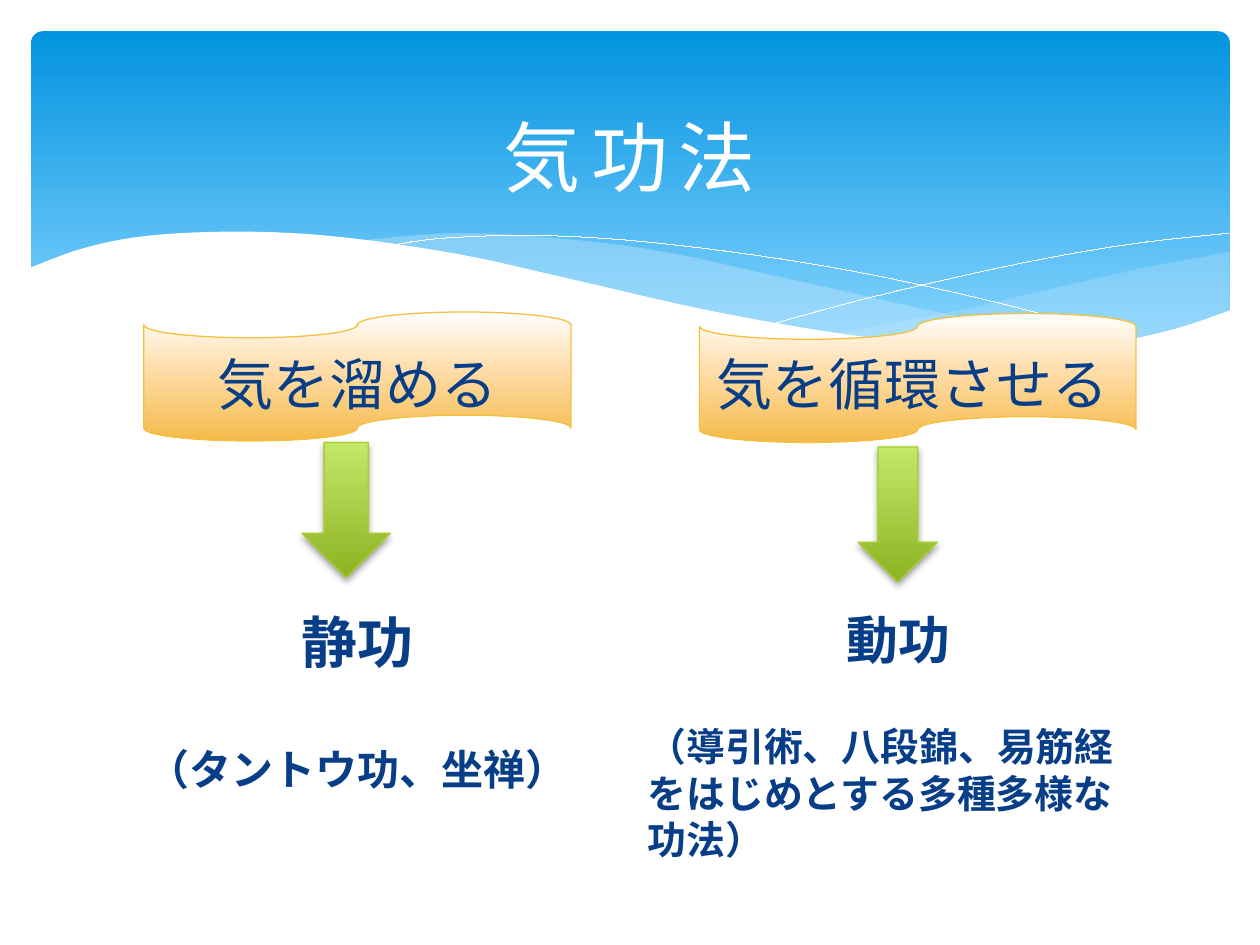
import pptx
import pptx.dml.color
import pptx.enum.shapes
import pptx.enum.text
import pptx.oxml.ns
import pptx.util
from lxml import etree

Cm, Pt = pptx.util.Cm, pptx.util.Pt
RGBColor = pptx.dml.color.RGBColor
Shape = pptx.enum.shapes.MSO_SHAPE
Align = pptx.enum.text.PP_ALIGN
Anchor = pptx.enum.text.MSO_ANCHOR
qn = pptx.oxml.ns.qn

FONT = "Noto Sans CJK JP"
WHITE = RGBColor(0xFF, 0xFF, 0xFF)
NAVY = RGBColor(0x07, 0x3E, 0x87)
PALE_BLUE = RGBColor(0xC6, 0xE7, 0xFC)
AMBER = RGBColor(0xF5, 0xC0, 0x40)
LIME = RGBColor(0xA5, 0xD0, 0x28)
SKY_STOPS = [(0, RGBColor(0x02, 0x93, 0xE0)), (90, RGBColor(0x83, 0xD3, 0xFE))]
TAPE_STOPS = [(0, WHITE), (44, RGBColor(0xFF, 0xDD, 0xAA)), (100, RGBColor(0xF4, 0xBB, 0x4A))]
ARROW_STOPS = [(0, RGBColor(0xC3, 0xE8, 0x6A)), (100, RGBColor(0x8D, 0xB2, 0x22))]

# Positions are left, top, width, height in centimetres.
TITLE = "気功法"
TITLE_AT = (1.27, 0.94, 22.86, 4.39)
BRANCHES = [
    dict(heading="気を溜める", heading_at=(1.9, 6.53, 10.62, 2.39), heading_slot=1,
         tape_at=(2.9, 6.29, 8.61, 2.6), arrow_at=(6.09, 8.92, 1.78, 2.72),
         name="静功", name_size=32, detail="（タントウ功、坐禅）", detail_size=24,
         detail_align=Align.CENTER, detail_at=(1.9, 12.12, 10.62, 5.0), detail_slot=2,
         gap=39.4),
    dict(heading="気を循環させる", heading_at=(13.09, 6.53, 10.62, 2.39), heading_slot=3,
         tape_at=(14.1, 6.32, 8.8, 2.6), arrow_at=(17.3, 9.01, 1.6, 2.72),
         name="動功", name_size=29.6,
         detail="（導引術、八段錦、易筋経をはじめとする多種多様な功法）", detail_size=22.2,
         detail_align=Align.LEFT, detail_at=(12.8, 12.12, 10.62, 4.9), detail_slot=4,
         gap=30.4),
]

# Each wave is a list of edges; each edge is smoothed through its points.
RIGHT_WAVE = [
    [(24.79, 5.08), (23.01, 5.41), (21.13, 5.84), (19.13, 6.3), (16.79, 6.73)],
    [(16.79, 6.73), (18.59, 6.96), (20.4, 7.06), (22.15, 6.96), (23.57, 6.68), (24.79, 6.27)],
]
MIDDLE_WAVE = [
    [(22.68, 6.93), (19.69, 6.45), (15.98, 5.64), (13.41, 5.08), (11.23, 4.8),
     (9.17, 4.7), (7.26, 4.85)],
    [(7.26, 4.85), (9.19, 5.16), (11.4, 5.64), (14.38, 6.3), (17.27, 6.81),
     (19.63, 7.04), (21.29, 7.06), (22.68, 6.93)],
]
WHITE_WAVE = [
    [(0.58, 5.41), (1.7, 5.0), (3.02, 4.75), (4.9, 4.67), (6.88, 4.78), (9.27, 5.13),
     (11.35, 5.59), (14.1, 6.22), (16.46, 6.65), (18.44, 6.91), (20.55, 7.04),
     (22.23, 6.93), (23.62, 6.65), (24.82, 6.25)],
    [(24.82, 8.36), (0.58, 8.36)],
]
FINE_LINES = [
    [(7.85, 4.95), (8.97, 4.8), (11.0, 4.75), (13.54, 4.93), (16.89, 5.41),
     (20.19, 6.12), (23.04, 6.91)],
    [(15.57, 6.53), (17.65, 5.97), (20.47, 5.33), (22.73, 4.93), (24.77, 4.7)],
]


def smooth(points, steps=6):
    """Return points along a Catmull-Rom curve through the given points."""
    padded = [points[0], *points, points[-1]]
    curve = [points[0]]
    for a, b, c, d in zip(padded, padded[1:], padded[2:], padded[3:]):
        for step in range(1, steps + 1):
            t = step / steps
            curve.append(tuple(
                0.5 * (2 * q + (r - p) * t + (2 * p - 5 * q + 4 * r - s) * t ** 2
                       + (3 * q - p - 3 * r + s) * t ** 3)
                for p, q, r, s in zip(a, b, c, d)))
    return curve


def add_curve(page, edges, fill=None, alpha=100):
    """Draw smoothed edges: a filled area, or a white hairline without a fill."""
    points = [(Cm(x), Cm(y)) for edge in edges for x, y in smooth(edge)]
    builder = page.shapes.build_freeform(*points[0])
    builder.add_line_segments(points[1:], close=fill is not None)
    curve = builder.convert_to_shape()
    curve.shadow.inherit = False
    if fill is None:
        curve.fill.background()
        curve.line.color.rgb = WHITE
        curve.line.width = Pt(0.01)
        return
    curve.fill.solid()
    curve.fill.fore_color.rgb = fill
    curve.line.fill.background()
    if alpha < 100:
        color = curve.element.spPr.find(qn("a:solidFill"))[0]
        etree.SubElement(color, qn("a:alpha"), val=str(alpha * 1000))


def add_gradient_shape(page, kind, at, stops, line=None):
    shape = page.shapes.add_shape(kind, *map(Cm, at))
    shape.shadow.inherit = False
    shape.fill.gradient()
    shape.fill.gradient_angle = 270
    stop_list = shape.element.spPr.find(".//" + qn("a:gsLst"))
    for stop in list(stop_list):
        stop_list.remove(stop)
    for position, color in stops:
        stop = etree.SubElement(stop_list, qn("a:gs"), pos=str(position * 1000))
        etree.SubElement(stop, qn("a:srgbClr"), val=str(color))
    if line is None:
        shape.line.fill.background()
    else:
        shape.line.color.rgb = line
        shape.line.width = Pt(0.75)
    return shape


def add_drop_shadow(shape):
    effects = shape.element.spPr.find(qn("a:effectLst"))
    shadow = etree.SubElement(effects, qn("a:outerShdw"), blurRad=str(Pt(4)),
                              dist=str(Pt(2)), dir="5400000", rotWithShape="0")
    color = etree.SubElement(shadow, qn("a:srgbClr"), val="000000")
    etree.SubElement(color, qn("a:alpha"), val="38000")


def place(box, at, anchor):
    """Move a placeholder, bring it to the front and return its text frame."""
    box.left, box.top, box.width, box.height = map(Cm, at)
    box.text_frame.word_wrap = True
    box.text_frame.auto_size = pptx.enum.text.MSO_AUTO_SIZE.NONE
    box.text_frame.vertical_anchor = anchor
    box.element.getparent().append(box.element)
    return box.text_frame


def write(para, text, size, color=NAVY, bold=False, align=Align.CENTER, before=0, tracking=0):
    para.alignment = align
    para.space_before = Pt(before)
    properties = para._p.get_or_add_pPr()
    properties.set("marL", "0")
    properties.set("indent", "0")
    etree.SubElement(properties, qn("a:buNone"))
    span = para.add_run()
    span.text = text
    span.font.size = Pt(size)
    span.font.bold = bold
    span.font.color.rgb = color
    span.font.name = FONT
    run_properties = span._r.get_or_add_rPr()
    etree.SubElement(run_properties, qn("a:ea"), typeface=FONT)
    if tracking:
        run_properties.set("spc", str(tracking * 100))


def main():
    deck = pptx.Presentation()
    deck.slide_width, deck.slide_height = Cm(25.4), Cm(19.05)
    page = deck.slides.add_slide(deck.slide_layouts.get_by_name("Comparison"))
    slots = {box.placeholder_format.idx: box for box in page.placeholders}

    band = add_gradient_shape(page, Shape.ROUNDED_RECTANGLE, (0.63, 0.63, 24.16, 6.86), SKY_STOPS)
    band.adjustments[0] = 0.034
    add_curve(page, RIGHT_WAVE, PALE_BLUE, alpha=29)
    add_curve(page, MIDDLE_WAVE, PALE_BLUE, alpha=40)
    for line in FINE_LINES:
        add_curve(page, [line])
    add_curve(page, WHITE_WAVE, WHITE)

    title = place(slots[0], TITLE_AT, Anchor.MIDDLE)
    write(title.paragraphs[0], TITLE, 44, color=WHITE, tracking=6)
    for branch in BRANCHES:
        add_gradient_shape(page, Shape.FLOWCHART_PUNCHED_TAPE, branch["tape_at"],
                           TAPE_STOPS, AMBER)
        heading = place(slots[branch["heading_slot"]], branch["heading_at"], Anchor.MIDDLE)
        write(heading.paragraphs[0], branch["heading"], 32)
        detail = place(slots[branch["detail_slot"]], branch["detail_at"], Anchor.TOP)
        write(detail.paragraphs[0], branch["name"], branch["name_size"], bold=True)
        write(detail.add_paragraph(), branch["detail"], branch["detail_size"], bold=True,
              align=branch["detail_align"], before=branch["gap"])
        arrow = add_gradient_shape(page, Shape.DOWN_ARROW, branch["arrow_at"], ARROW_STOPS, LIME)
        add_drop_shadow(arrow)
    deck.save("out.pptx")


if __name__ == "__main__":
    main()
